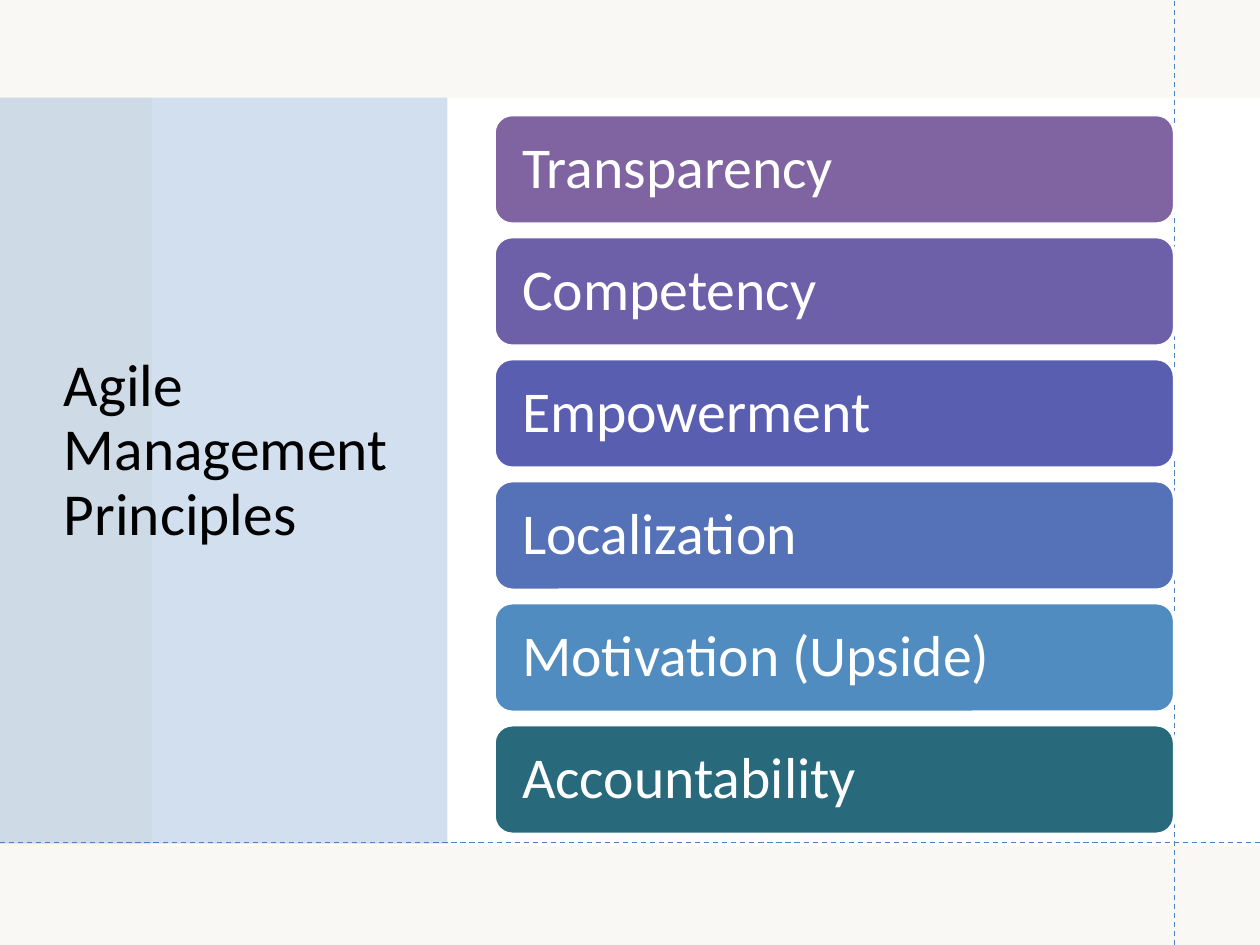
"""Build the slide on agile management principles."""
from typing import NamedTuple

from lxml.etree import SubElement
from pptx import Presentation
from pptx.dml.color import RGBColor
from pptx.enum.dml import MSO_LINE_DASH_STYLE as Dash
from pptx.enum.shapes import MSO_CONNECTOR as Connector, MSO_SHAPE as Preset
from pptx.enum.text import MSO_ANCHOR as Anchor, PP_ALIGN as Align
from pptx.oxml.ns import qn
from pptx.util import Cm, Pt

COLOURS = {
    "white": "FFFFFF", "black": "000000", "beige": "EEECE1", "blue": "4F81BD",
    "purple": "8064A2", "violet": "6E5FA9", "indigo": "5A5EB1",
    "cobalt": "5572B8", "sky": "508CBF", "teal": "286A7C",
}
WIDTH, HEIGHT = 25.4, 19.05
FONT = "Calibri"
BAR_LEFT, BAR_TOP, BAR_WIDTH, BAR_HEIGHT, BAR_PITCH = 9.96, 2.31, 13.72, 2.21, 2.46
BAR_INSET = 0.46


class Panel(NamedTuple):
    left: float
    top: float
    width: float
    height: float
    colour: str
    opacity: int = 100


class Guide(NamedTuple):
    start_x: float
    start_y: float
    end_x: float
    end_y: float


class Principle(NamedTuple):
    name: str
    colour: str


PANELS = [
    Panel(0, 0, WIDTH, HEIGHT, "white"),
    Panel(0, 0, WIDTH, HEIGHT, "beige", 35),
    Panel(3.07, 1.97, 22.33, 15.09, "white"),
    Panel(0, 1.97, 9.02, 15.04, "blue", 25),
]
GUIDES = [Guide(23.67, HEIGHT, 23.67, 0), Guide(0, 16.99, WIDTH, 16.99)]
PRINCIPLES = [
    Principle("Transparency", "purple"),
    Principle("Competency", "violet"),
    Principle("Empowerment", "indigo"),
    Principle("Localization", "cobalt"),
    Principle("Motivation (Upside)", "sky"),
    Principle("Accountability", "teal"),
]


def rgb(name: str) -> RGBColor:
    return RGBColor.from_string(COLOURS[name])


def draw_panel(page, panel: Panel) -> None:
    box = page.shapes.add_shape(Preset.RECTANGLE, *map(Cm, panel[:4]))
    box.shadow.inherit = False
    box.line.fill.background()
    box.fill.solid()
    box.fill.fore_color.rgb = rgb(panel.colour)
    if panel.opacity < 100:
        colour = box.fill._xPr.find(f"{qn('a:solidFill')}/{qn('a:srgbClr')}")
        SubElement(colour, qn("a:alpha"), val=str(panel.opacity * 1000))


def draw_guide(page, guide: Guide) -> None:
    line = page.shapes.add_connector(Connector.STRAIGHT, *map(Cm, guide))
    line.line.color.rgb = rgb("blue")
    line.line.width = Pt(0.75)
    line.line.dash_style = Dash.DASH
    SubElement(line._element.spPr, qn("a:effectLst"))


def write(box, text: str, size: float, colour: str) -> None:
    frame = box.text_frame
    frame.word_wrap = True
    frame.vertical_anchor = Anchor.MIDDLE
    para = frame.paragraphs[0]
    para.text = text
    para.alignment = Align.LEFT
    para.line_spacing = 0.9
    para.font.name = FONT
    para.font.size = Pt(size)
    para.font.color.rgb = rgb(colour)


def draw_principle(page, index: int, principle: Principle) -> None:
    top = BAR_TOP + index * BAR_PITCH
    bar = page.shapes.add_shape(
        Preset.ROUNDED_RECTANGLE, Cm(BAR_LEFT), Cm(top), Cm(BAR_WIDTH), Cm(BAR_HEIGHT)
    )
    bar.shadow.inherit = False
    bar.fill.solid()
    bar.fill.fore_color.rgb = rgb(principle.colour)
    bar.line.color.rgb = rgb("white")
    bar.line.width = Pt(2)
    bar.text_frame.margin_left = bar.text_frame.margin_right = Cm(BAR_INSET)
    write(bar, principle.name, 33, "white")


def main() -> None:
    deck = Presentation()
    deck.slide_width, deck.slide_height = Cm(WIDTH), Cm(HEIGHT)
    page = deck.slides.add_slide(deck.slide_layouts[6])
    for panel in PANELS:
        draw_panel(page, panel)
    for guide in GUIDES:
        draw_guide(page, guide)
    title = page.shapes.add_textbox(Cm(1.04), Cm(1.88), Cm(7.52), Cm(14.45))
    write(title, "Agile Management Principles", 34, "black")
    for index, principle in enumerate(PRINCIPLES):
        draw_principle(page, index, principle)
    deck.save("out.pptx")


if __name__ == "__main__":
    main()
